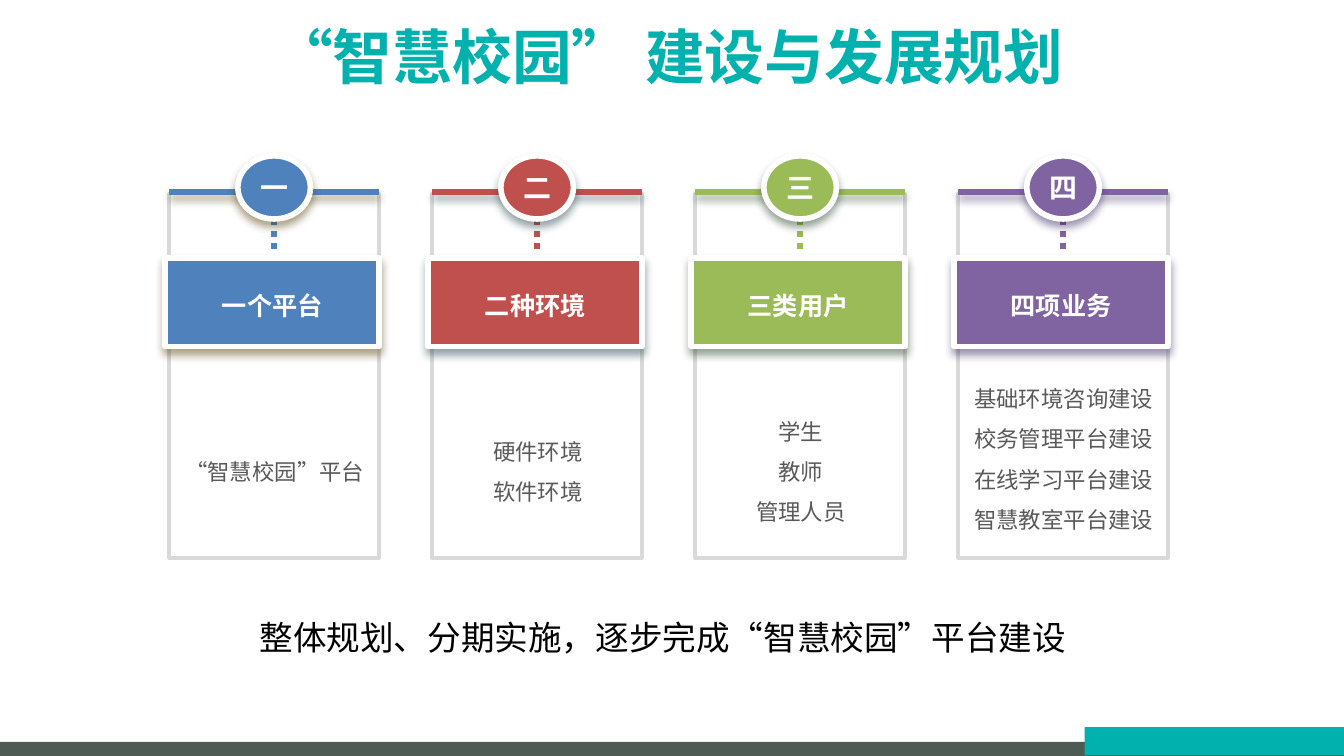
from lxml import etree
from pptx import Presentation
from pptx.dml.color import RGBColor
from pptx.enum.dml import MSO_LINE
from pptx.enum.shapes import MSO_CONNECTOR, MSO_SHAPE
from pptx.enum.text import MSO_ANCHOR, PP_ALIGN
from pptx.oxml.ns import qn
from pptx.util import Inches, Pt

RECT, OVAL = MSO_SHAPE.RECTANGLE, MSO_SHAPE.OVAL
STRAIGHT = MSO_CONNECTOR.STRAIGHT
DOTTED = MSO_LINE.ROUND_DOT
TOP, MIDDLE = MSO_ANCHOR.TOP, MSO_ANCHOR.MIDDLE
CENTER = PP_ALIGN.CENTER

FONT = "Noto Sans CJK SC"
TEAL, SLATE, WHITE = "00B1AD", "4E5A54", "FFFFFF"
FRAME_GREY, TEXT_GREY = "D9D9D9", "595959"

SLIDE_WIDTH = 10
SLIDE_HEIGHT = SLIDE_WIDTH * 9 / 16
FIRST_LEFT = 1.26
PITCH = (7.13 - FIRST_LEFT) / 3
FRAME_WIDTH = 1.56
DETAIL_BOX = (2.61, 1.7)  # top, height

# number, heading, detail lines, colour, shadow colour, detail box
COLUMNS = [
    ("一", "一个平台", ["“智慧校园”平台"], "4F81BD", "543D00", DETAIL_BOX),
    ("二", "二种环境", ["硬件环境", "软件环境"], "C0504D", "214049", DETAIL_BOX),
    ("三", "三类用户", ["学生", "教师", "管理人员"], "9BBB59", "254126", DETAIL_BOX),
    ("四", "四项业务",
     ["基础环境咨询建设", "校务管理平台建设", "在线学习平台建设", "智慧教室平台建设"],
     "8064A2", "35225B", (2.58, 1.57)),
]


def rgb(value):
    return RGBColor.from_string(value)


def set_shadow(item, color=None):
    """Drop the theme shadow; with a colour, add a soft one below."""
    effects = item._element.spPr.find(qn("a:effectLst"))
    if effects is None:
        effects = etree.SubElement(item._element.spPr, qn("a:effectLst"))
    if color:
        outer = etree.SubElement(
            effects, qn("a:outerShdw"), blurRad=str(Pt(4.5)), dist=str(Pt(3)),
            dir="5400000", algn="t", rotWithShape="0")
        tint = etree.SubElement(outer, qn("a:srgbClr"), val=color)
        etree.SubElement(tint, qn("a:alpha"), val="48000")


def write_text(holder, lines, size, color, bold=False, spacing=None,
               anchor=TOP, wrap=True, insets=None):
    frame = holder.text_frame
    frame.word_wrap = wrap
    frame.vertical_anchor = anchor
    if insets:
        frame.margin_left = frame.margin_right = Inches(insets[0])
        frame.margin_top = frame.margin_bottom = Inches(insets[1])
    for i, line in enumerate(lines):
        paragraph = frame.paragraphs[0] if i == 0 else frame.add_paragraph()
        paragraph.alignment = CENTER
        if spacing:
            paragraph.line_spacing = spacing
        run = paragraph.add_run()
        run.text = line
        run.font.size = Pt(size)
        run.font.bold = bold
        run.font.color.rgb = rgb(color)
        run.font.name = FONT
        etree.SubElement(run._r.get_or_add_rPr(), qn("a:ea"), typeface=FONT)


def add_text(slide, left, top, width, height, lines, **style):
    box = slide.shapes.add_textbox(
        Inches(left), Inches(top), Inches(width), Inches(height))
    write_text(box, lines, **style)


def add_block(slide, kind, left, top, width, height, fill=None,
              line=None, weight=1, shadow=None):
    block = slide.shapes.add_shape(
        kind, Inches(left), Inches(top), Inches(width), Inches(height))
    if fill:
        block.fill.solid()
        block.fill.fore_color.rgb = rgb(fill)
    else:
        block.fill.background()
    if line:
        block.line.color.rgb = rgb(line)
        block.line.width = Pt(weight)
    else:
        block.line.fill.background()
    block.shadow.inherit = False
    set_shadow(block, shadow)
    return block


def add_line(slide, x1, y1, x2, y2, color, weight, dash=None, shadow=None):
    line = slide.shapes.add_connector(
        STRAIGHT, Inches(x1), Inches(y1), Inches(x2), Inches(y2))
    line.line.color.rgb = rgb(color)
    line.line.width = Pt(weight)
    if dash:
        line.line.dash_style = dash
    set_shadow(line, shadow)


def add_column(slide, left, number, heading, details, color, shadow, detail_box):
    center = left + FRAME_WIDTH / 2
    raised = {"fill": color, "line": WHITE, "weight": 3, "shadow": shadow}

    # Frame with its dotted stem and coloured top edge
    add_line(slide, center, 1.63, center, 1.92, color, 3.25, dash=DOTTED)
    add_block(slide, RECT, left, 1.44, FRAME_WIDTH, 2.71,
              line=FRAME_GREY, weight=2)
    add_line(slide, left, 1.43, left + FRAME_WIDTH, 1.43, color, 3, shadow=shadow)

    # Heading panel and number badge
    panel = add_block(slide, RECT, left - 0.03, 1.92, 1.59, 0.66, **raised)
    write_text(panel, [heading], size=13.5, color=WHITE, bold=True,
               spacing=1.2, anchor=MIDDLE, wrap=False)
    badge = add_block(slide, OVAL, center - 0.27, 1.16, 0.54, 0.47, **raised)
    write_text(badge, [number], size=15, color=WHITE, bold=True,
               anchor=MIDDLE, wrap=False)

    # Details
    top, height = detail_box
    add_text(slide, left - 0.01, top, 1.59, height, details, size=12,
             color=TEXT_GREY, spacing=1.5, anchor=MIDDLE, insets=(0.06, 0))


def main():
    deck = Presentation()
    deck.slide_width = Inches(SLIDE_WIDTH)
    deck.slide_height = Inches(SLIDE_HEIGHT)
    slide = deck.slides.add_slide(deck.slide_layouts[6])

    # Footer bars
    add_block(slide, RECT, 0, 5.52, SLIDE_WIDTH, 0.11, fill=SLATE)
    add_block(slide, RECT, 8.07, 5.41, 1.93, 0.21, fill=TEAL)

    # Title
    add_text(slide, 0.41, 0.1, 9.13, 0.61, ["“智慧校园” 建设与发展规划"],
             size=32, color=TEAL, bold=True)

    # Four columns
    for i, column in enumerate(COLUMNS):
        add_column(slide, FIRST_LEFT + i * PITCH, *column)

    # Summary
    add_text(slide, 1.19, 4.54, 7.48, 0.4,
             ["整体规划、分期实施，逐步完成“智慧校园”平台建设"],
             size=18, color="000000")

    deck.save("out.pptx")


if __name__ == "__main__":
    main()
